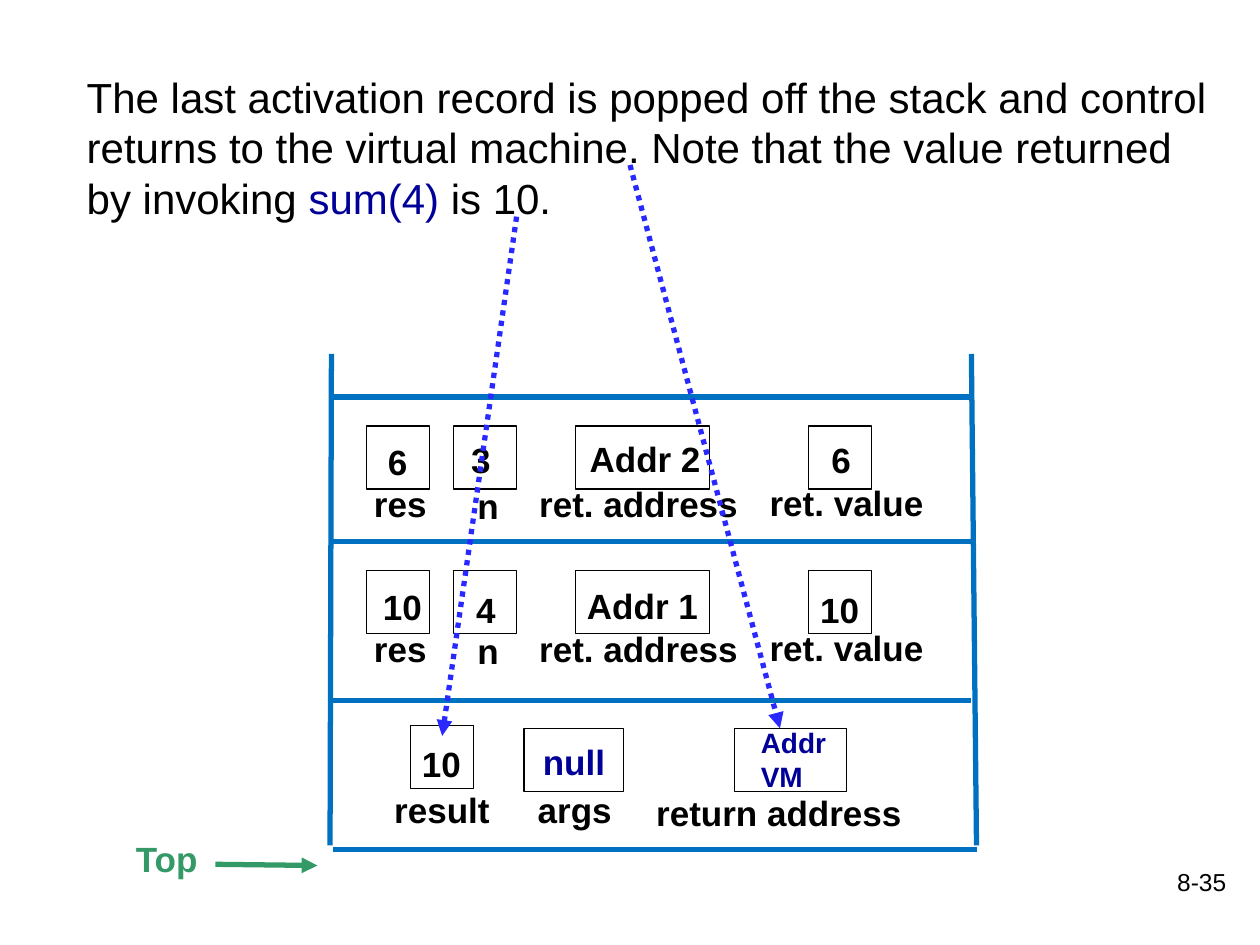
from lxml import etree
from pptx import Presentation
from pptx.dml.color import RGBColor
from pptx.enum.dml import MSO_LINE
from pptx.enum.shapes import MSO_CONNECTOR, MSO_SHAPE
from pptx.enum.text import MSO_ANCHOR, PP_ALIGN
from pptx.oxml.ns import qn
from pptx.util import Pt

STRAIGHT = MSO_CONNECTOR.STRAIGHT
RECT = MSO_SHAPE.RECTANGLE
LEFT, RIGHT = PP_ALIGN.LEFT, PP_ALIGN.RIGHT
TOP = MSO_ANCHOR.TOP
DOTS = MSO_LINE.ROUND_DOT  # sysDot in the file

BLACK, NAVY, GREEN = "000000", "000099", "339966"
FRAME, POINTER = "0070C0", "2929FF"


def color(value):
    return RGBColor.from_string(value)


class Deck:
    font = "Arial"
    label_size = 20
    label_height = 31.5

    def __init__(self, prs):
        self.s = prs.slides.add_slide(prs.slide_layouts[6])

    def text(self, x, y, w, h, paragraphs, size, bold=False, align=LEFT,
             wrap=True, before=0):
        """Each paragraph is a list of (text, colour) runs."""
        sp = self.s.shapes.add_textbox(Pt(x), Pt(y), Pt(w), Pt(h))
        tf = sp.text_frame
        tf.word_wrap = wrap
        tf.vertical_anchor = TOP
        for i, runs in enumerate(paragraphs):
            p = tf.paragraphs[0] if i == 0 else tf.add_paragraph()
            p.alignment = align
            p.space_before = Pt(before)
            for words, ink in runs:
                r = p.add_run()
                r.text = words
                r.font.name = self.font
                r.font.size = Pt(size)
                r.font.bold = bold
                r.font.color.rgb = color(ink)

    def label(self, x, y, w, words, ink=BLACK):
        self.text(x, y, w, self.label_height, [[(words, ink)]],
                  self.label_size, bold=True, wrap=False)

    def box(self, x, y, w, h=36):
        sp = self.s.shapes.add_shape(RECT, Pt(x), Pt(y), Pt(w), Pt(h))
        sp.shadow.inherit = False
        sp.fill.background()
        sp.line.color.rgb = color(BLACK)
        sp.line.width = Pt(0.75)

    def line(self, x1, y1, x2, y2, ink, arrow=False, dash=None):
        cn = self.s.shapes.add_connector(STRAIGHT, Pt(x1), Pt(y1), Pt(x2), Pt(y2))
        cn.line.color.rgb = color(ink)
        cn.line.width = Pt(3)
        if dash:
            cn.line.dash_style = dash
        if arrow:
            etree.SubElement(cn.line._get_or_add_ln(), qn("a:tailEnd"), type="triangle")
        etree.SubElement(cn._element.spPr, qn("a:effectLst"))


def main():
    prs = Presentation()
    prs.slide_width, prs.slide_height = Pt(720), Pt(540)
    deck = Deck(prs)

    # Page number and explanation
    deck.text(558, 491.8, 149.8, 36, [[("8-35", BLACK)]], 14, align=RIGHT)
    deck.text(42.5, 37.4, 665.3, 90.7, [[
        ("The last activation record is popped off the stack and control returns "
         "to the virtual machine. Note that the value returned by invoking ", BLACK),
        ("sum(4)", NAVY),
        (" is 10.", BLACK),
    ]], 24, before=4.8)

    # Stack frame: sides, base and separators
    deck.line(189.4, 202.3, 188.6, 483.1, FRAME)
    deck.line(558, 483.1, 555.1, 202.3, FRAME)
    deck.line(190.1, 485.3, 558, 485.3, FRAME)
    for y in (226.8, 309.6, 400.3):
        deck.line(190.1, y, 555.1, y, FRAME)

    # Activation records of sum: box x, width; label x, dy, width, words
    fields = [
        (209.5, 36, 206.6, 0, 44.6, "res"),
        (259.2, 36, 265.7, 1, 26.6, "n"),
        (329, 76.3, 301, 0, 128.9, "ret. address"),
        (462.2, 36, 432.7, -0.5, 103, "ret. value"),
    ]
    # Record top; values as x, dy, width, words
    records = [
        (226.8, [(214.6, 21.6, 25.9, "6"), (262.1, 20.2, 25.9, "3"),
                 (329.8, 19.4, 78.5, "Addr 2"), (468, 20.2, 25.9, "6")]),
        (309.6, [(211.7, 21.6, 36.7, "10"), (265, 23, 25.9, "4"),
                 (328.3, 20.9, 78.5, "Addr 1"), (461.5, 23, 36.7, "10")]),
    ]
    for top, values in records:
        for box_x, box_w, x, dy, w, name in fields:
            deck.box(box_x, top + 16.6, box_w)
            deck.label(x, top + 45.4 + dy, w, name)
        for x, dy, w, value in values:
            deck.label(x, top + dy, w, value)

    # Activation record of main
    for x, y, w in [(234.7, 414.7, 36), (299.5, 416.2, 56.9), (419.8, 416.2, 64.1)]:
        deck.box(x, y, w)
    deck.label(218.2, 447.1, 69.1, "result")
    deck.label(300.2, 447.1, 56.9, "args")
    deck.label(367.9, 448.6, 167.8, "return address")
    deck.label(234, 420.5, 36.7, "10")
    deck.label(303.1, 419.8, 50.4, "null", NAVY)
    deck.text(427.7, 411.1, 51.8, 46.1, [[("Addr", NAVY)], [("VM", NAVY)]],
              16, bold=True, wrap=False)

    # Top of stack
    deck.label(70.6, 475.2, 50.4, "Top", GREEN)
    deck.line(123.1, 493.9, 181.4, 494.6, GREEN, arrow=True)

    # Pointers from the explanation to the returned values
    deck.line(360, 94.3, 445.7, 416.2, POINTER, arrow=True, dash=DOTS)
    deck.line(295.2, 123.8, 252.7, 420.5, POINTER, arrow=True, dash=DOTS)

    prs.save("out.pptx")


if __name__ == "__main__":
    main()
